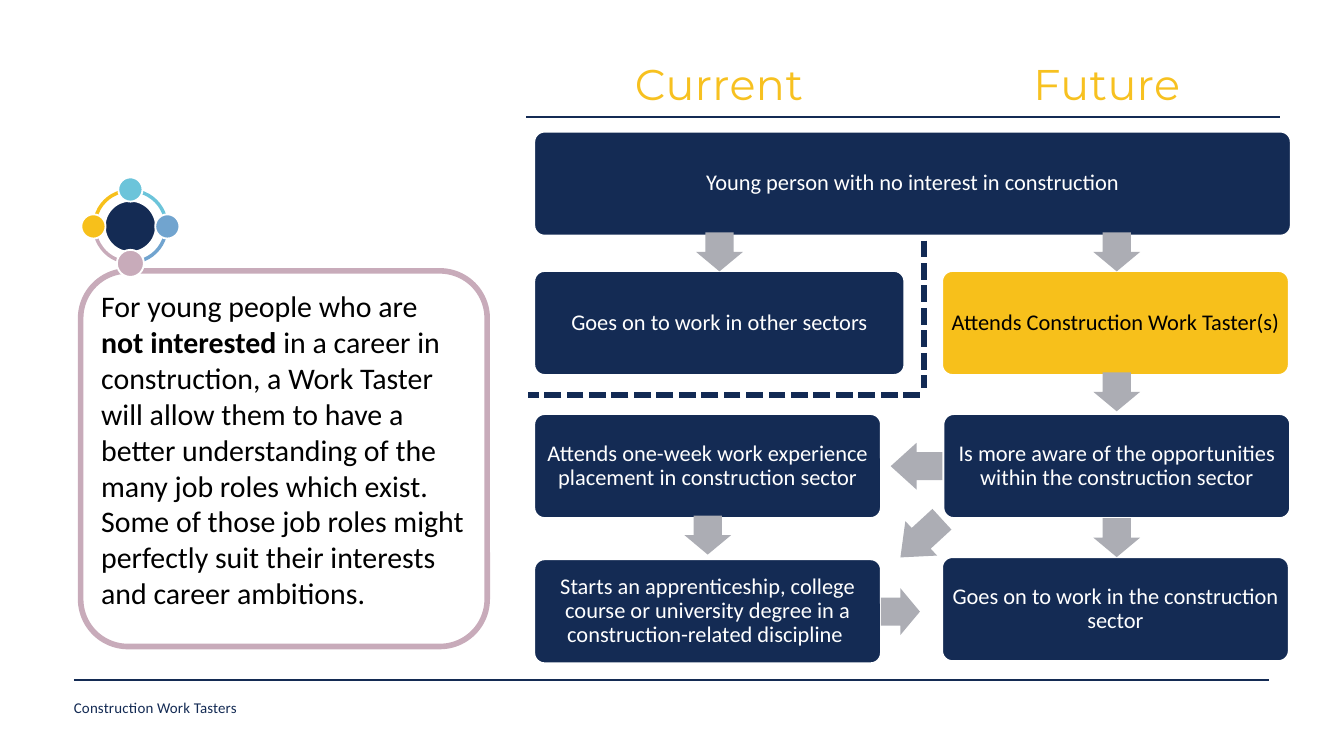
from dataclasses import dataclass

from lxml import etree
from pptx import Presentation
from pptx.dml.color import RGBColor
from pptx.enum.dml import MSO_LINE
from pptx.enum.shapes import MSO_CONNECTOR, MSO_SHAPE
from pptx.enum.text import MSO_ANCHOR, PP_ALIGN
from pptx.oxml.ns import qn
from pptx.util import Pt

ROUNDED, DOWN = MSO_SHAPE.ROUNDED_RECTANGLE, MSO_SHAPE.DOWN_ARROW
OVAL, ARC = MSO_SHAPE.OVAL, MSO_SHAPE.BLOCK_ARC
STRAIGHT = MSO_CONNECTOR.STRAIGHT
DASHED = MSO_LINE.SQUARE_DOT
LEFT, CENTER = PP_ALIGN.LEFT, PP_ALIGN.CENTER
TOP, MIDDLE = MSO_ANCHOR.TOP, MSO_ANCHOR.MIDDLE


@dataclass(frozen=True)
class Theme:
    navy: str = "142B54"
    divider: str = "122A54"
    yellow: str = "F7C01B"
    heading: str = "F7C120"
    teal: str = "6CC4DA"
    blue: str = "71A4CF"
    mauve: str = "C8ABBA"
    gray: str = "ACADB4"
    white: str = "FFFFFF"
    black: str = "000000"
    body_font: str = "Calibri"
    heading_font: str = "Montserrat"
    heading_size: float = 46
    card_size: float = 32
    step_size: float = 24
    footer_size: float = 16


THEME = Theme()

STEP_HEIGHT = 111.5
STEP_WIDTH = 371.5
LEFT_COLUMN, RIGHT_COLUMN = 572.4, 1009.4
# left, top, width, fill, text colour, wording
STEPS = [
    (LEFT_COLUMN, 141, 810.6, THEME.navy, THEME.white,
     "Young person with no interest in construction"),
    (LEFT_COLUMN, 290.3, 396.6, THEME.navy, THEME.white,
     "Goes on to work in other sectors"),
    (RIGHT_COLUMN, 290.3, STEP_WIDTH, THEME.yellow, THEME.black,
     "Attends Construction Work Taster(s)"),
    (LEFT_COLUMN, 443.6, STEP_WIDTH, THEME.navy, THEME.white,
     "Attends one-week work experience placement in construction sector"),
    (RIGHT_COLUMN + 1.4, 443.6, STEP_WIDTH, THEME.navy, THEME.white,
     "Is more aware of the opportunities within the construction sector"),
    (LEFT_COLUMN, 599.2, STEP_WIDTH, THEME.navy, THEME.white,
     "Starts an apprenticeship, college course or university degree in a "
     "construction-related discipline "),
    (RIGHT_COLUMN, 596.9, STEP_WIDTH, THEME.navy, THEME.white,
     "Goes on to work in the construction sector"),
]

ARROW_WIDTH, ARROW_LENGTH = 50.2, 41.8
# left, top, length, rotation
ARROWS = [
    (745.8, 249, ARROW_LENGTH, 0),
    (1171.4, 249, ARROW_LENGTH, 0),
    (1171.4, 398.9, ARROW_LENGTH, 0),
    (1171.4, 555.1, ARROW_LENGTH, 0),
    (733.2, 552.4, ARROW_LENGTH, 0),
    (956.9, 471.8, 55.4, 90),
    (961.9, 546.6, 60.4, 47.4),
    (939.6, 634.4, ARROW_LENGTH, 270),
]

CARD_TEXT = [
    ("For young people who are ", False),
    ("not interested ", True),
    ("in a career in construction, a Work Taster will allow them to have a "
     "better understanding of the many job roles which exist. Some of those "
     "job roles might perfectly suit their interests and career ambitions.", False),
]


def color(code):
    return RGBColor.from_string(code)


def write(shape, spans, *, size, ink, font=THEME.body_font, align=LEFT,
          anchor=TOP, inset=0, leading=None, tracking=None):
    """Fill a shape with one paragraph of (text, bold) spans."""
    frame = shape.text_frame
    frame.word_wrap = True
    frame.vertical_anchor = anchor
    horizontal, vertical = inset if isinstance(inset, tuple) else (inset, inset)
    frame.margin_left = frame.margin_right = Pt(horizontal)
    frame.margin_top = frame.margin_bottom = Pt(vertical)
    para = frame.paragraphs[0]
    para.alignment = align
    if leading:
        para.line_spacing = leading
    for text, bold in spans:
        span = para.add_run()
        span.text = text
        span.font.name = font
        span.font.size = Pt(size)
        span.font.bold = bold
        span.font.color.rgb = color(ink)
        if tracking:
            span.font._element.set("spc", str(round(tracking * 100)))


def add_shape(slide, kind, left, top, width, height, *, fill=None, line=None,
              line_width=2, adjust=(), rotation=0):
    shape = slide.shapes.add_shape(kind, Pt(left), Pt(top), Pt(width), Pt(height))
    shape.shadow.inherit = False
    shape.rotation = rotation
    for index, value in enumerate(adjust):
        shape.adjustments[index] = value
    if fill:
        shape.fill.solid()
        shape.fill.fore_color.rgb = color(fill)
    else:
        shape.fill.background()
    if line:
        shape.line.color.rgb = color(line)
        shape.line.width = Pt(line_width)
    else:
        shape.line.fill.background()
    return shape


def add_line(slide, x1, y1, x2, y2, *, ink, width, dash=None):
    line = slide.shapes.add_connector(STRAIGHT, Pt(x1), Pt(y1), Pt(x2), Pt(y2))
    line.line.color.rgb = color(ink)
    line.line.width = Pt(width)
    if dash:
        line.line.dash_style = dash
    etree.SubElement(line._element.spPr, qn("a:effectLst"))


def add_label(slide, text, left, top, width, height, **text_format):
    box = slide.shapes.add_textbox(Pt(left), Pt(top), Pt(width), Pt(height))
    write(box, [(text, False)], **text_format)


def add_arrow(slide, left, top, length, rotation):
    head = 0.5 * length / min(ARROW_WIDTH, length)
    add_shape(slide, DOWN, left, top, ARROW_WIDTH, length, fill=THEME.gray,
              adjust=(0.6, head), rotation=rotation)


def add_disc(slide, x, y, diameter, fill):
    add_shape(slide, OVAL, x - diameter / 2, y - diameter / 2, diameter, diameter,
              fill=fill, line=THEME.white)


def add_orbit_icon(slide, x, y):
    """Ring of four arcs and four dots around a solid centre."""
    ring, reach = 80.6, 39.6
    # arc start and end, in 100000ths of the preset's angle unit
    arcs = [(108, 162, THEME.teal), (54, 108, THEME.yellow),
            (0, 54, THEME.mauve), (162, 0, THEME.blue)]
    for start, end, fill in arcs:
        add_shape(slide, ARC, x - ring / 2, y - ring / 2, ring, ring, fill=fill,
                  adjust=(start, end, 0.046), rotation=90)
    add_disc(slide, x, y, 55, THEME.navy)
    dots = [(1, 0, 26, THEME.blue), (0, 1, 29, THEME.mauve),
            (-1, 0, 26, THEME.yellow), (0, -1, 26, THEME.teal)]
    for across, down, diameter, fill in dots:
        add_disc(slide, x + across * reach, y + down * reach, diameter, fill)


def main():
    deck = Presentation()
    deck.slide_width, deck.slide_height = Pt(1440), Pt(810)
    slide = deck.slides.add_slide(deck.slide_layouts[6])

    add_line(slide, 79.2, 728.6, 1359.4, 728.6, ink=THEME.navy, width=2.25)
    add_line(slide, 563.8, 125.3, 1371.6, 125.3, ink=THEME.navy, width=3)
    card = add_shape(slide, ROUNDED, 86.4, 290.2, 435.6, 402.5,
                     line=THEME.mauve, line_width=6, adjust=(0.126,))
    write(card, CARD_TEXT, size=THEME.card_size, ink=THEME.black, inset=(7.2, 3.6))
    add_orbit_icon(slide, 139.7, 242.6)

    for text, left in (("Current", 609.1), ("Future", 1024.6)):
        add_label(slide, text, left, 80.6, 322.6, 39.6, size=THEME.heading_size,
                  ink=THEME.heading, font=THEME.heading_font, align=CENTER,
                  leading=Pt(36.8), tracking=0.6)
    add_label(slide, "Construction Work Tasters", 79.2, 745.2, 276.5, 20.9,
              size=THEME.footer_size, ink=THEME.navy, leading=Pt(22.4), tracking=0.2)

    for left, top, width, fill, ink, text in STEPS:
        step = add_shape(slide, ROUNDED, left, top, width, STEP_HEIGHT, fill=fill,
                         line=THEME.white, adjust=(0.1,))
        write(step, [(text, False)], size=THEME.step_size, ink=ink, align=CENTER,
              anchor=MIDDLE, inset=5, leading=0.9)
    for arrow in ARROWS:
        add_arrow(slide, *arrow)
    for ends in ((990, 257.8, 990, 416.2), (985.7, 423.4, 565.9, 423.4)):
        add_line(slide, *ends, ink=THEME.divider, width=6, dash=DASHED)

    deck.save("out.pptx")


if __name__ == "__main__":
    main()
